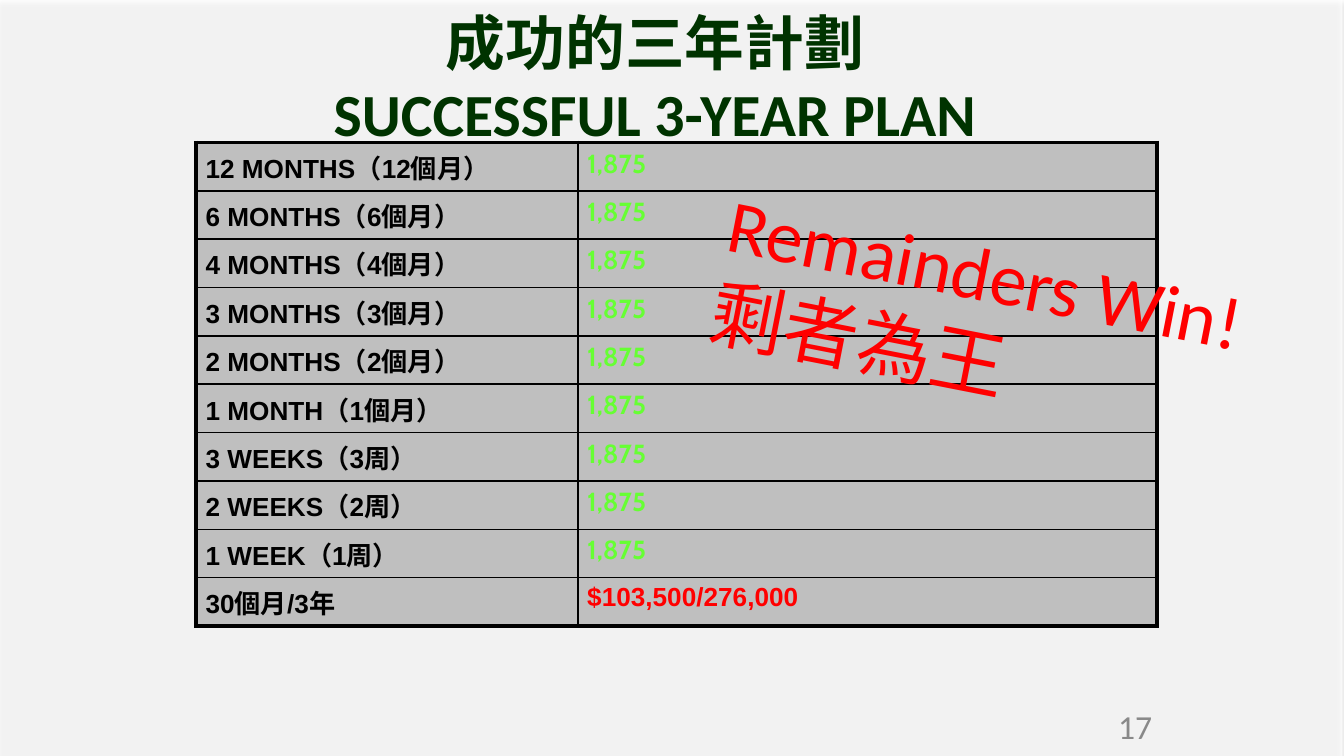
from itertools import cycle

from lxml.etree import SubElement
from pptx import Presentation
from pptx.dml.color import RGBColor
from pptx.enum.shapes import MSO_SHAPE as Shape
from pptx.enum.text import MSO_ANCHOR as Anchor, PP_ALIGN as Align
from pptx.oxml import parse_xml
from pptx.oxml.ns import nsdecls, qn
from pptx.util import Inches, Pt

W = 10
H = W * 9 / 16
CJK = "Noto Sans CJK SC"
COLS = (2.84, 4.31)
ROW_H = 0.36
MONTHS, WEEKS = ("個月）",), ("周", "）")
PERIODS = [(f"{n} MONTH{'S' if n > 1 else ''}（{n}", *MONTHS) for n in (12, 6, 4, 3, 2, 1)]
PERIODS += [(f"{n} WEEK{'S' if n > 1 else ''}（{n}", *WEEKS) for n in (3, 2, 1)]
ROWS = [(label, "1,875", "Cabin", "66FF33") for label in PERIODS]
ROWS.append((("30", "個月", "/3", "年"), "$103,500/276,000", "Arial", "FF0000"))


def rgb(value):
    """Turn a hex string into a colour."""
    return RGBColor.from_string(value)


def style(font, color, **fmt):
    """Set the colour and other attributes of a font, with a CJK fallback."""
    for key, value in fmt.items():
        setattr(font, key, value)
    font.color.rgb = rgb(color)
    SubElement(font._element, qn("a:ea")).set("typeface", CJK)


def add_run(p, text, **fmt):
    """Append a styled run to a paragraph."""
    r = p.add_run()
    r.text = text
    style(r.font, **fmt)


def set_frame(tf):
    """Give a text frame the slide's insets, wrapping and top anchor."""
    fmt = dict(margin_left=Inches(0.07), margin_right=Inches(0.07),
               margin_top=Inches(0.04), margin_bottom=Inches(0.04),
               word_wrap=True, vertical_anchor=Anchor.TOP)
    for key, value in fmt.items():
        setattr(tf, key, value)


def place(sp, box):
    """Move and size a shape from a box in inches."""
    for key, value in zip(("left", "top", "width", "height"), box):
        setattr(sp, key, Inches(value))


def add_backdrop(s, box):
    """Add a translucent white panel with a soft shadow behind everything."""
    sp = s.shapes.add_shape(Shape.RECTANGLE, *map(Inches, box))
    sp.line.fill.background()
    sp.fill.solid()
    sp.fill.fore_color.rgb = rgb("FFFFFF")
    color = sp._element.spPr.find(f'.//{qn("a:srgbClr")}')
    SubElement(color, qn("a:alpha")).set("val", "83000")
    sp._element.spPr.append(parse_xml(
        f'<a:effectLst {nsdecls("a")}><a:outerShdw blurRad="{Pt(3.1)}" dist="{Pt(1.8)}" '
        'dir="5400000" rotWithShape="0"><a:srgbClr val="000000"><a:alpha val="35000"/>'
        '</a:srgbClr></a:outerShdw></a:effectLst>'))
    s.shapes._spTree.insert(2, sp._element)


def add_title(s, lines, box):
    """Fill the title placeholder with centred lines."""
    sp = s.shapes.title
    place(sp, box)
    tf = sp.text_frame
    set_frame(tf)
    p = tf.paragraphs[0]
    p.alignment = Align.CENTER
    for i, line in enumerate(lines):
        if i:
            p.add_line_break()
        add_run(p, line, color="003300", size=Pt(32), name="Calibri", bold=True)


def add_text(s, lines, box, rotation=0, **fmt):
    """Add a text box with one paragraph per line."""
    sp = s.shapes.add_textbox(*map(Inches, box))
    sp.rotation = rotation
    tf = sp.text_frame
    set_frame(tf)
    for i, line in enumerate(lines):
        p = tf.add_paragraph() if i else tf.paragraphs[0]
        add_run(p, line, **fmt)


def set_borders(cell, widths):
    """Draw the left, right, top and bottom lines of a cell."""
    props = cell._tc.get_or_add_tcPr()
    for i, (side, width) in enumerate(zip("LRTB", widths)):
        props.insert(i, parse_xml(
            f'<a:ln{side} {nsdecls("a")} w="{Pt(width)}"><a:solidFill>'
            f'<a:srgbClr val="000000"/></a:solidFill></a:ln{side}>'))


def fill_cell(cell, parts, fonts, color):
    """Fill a cell with grey and bold runs in alternating fonts."""
    cell.fill.solid()
    cell.fill.fore_color.rgb = rgb("BFBFBF")
    cell.margin_left = cell.margin_right = Inches(0.07)
    cell.margin_top = cell.margin_bottom = Inches(0.04)
    p = cell.text_frame.paragraphs[0]
    for text, name in zip(parts, cycle(fonts)):
        add_run(p, text, color=color, size=Pt(14), name=name, bold=True)


def add_plan(s, left, top):
    """Add the plan table with a thick outer frame."""
    n = len(ROWS)
    frame = s.shapes.add_table(n, 2, *map(Inches, (left, top, sum(COLS), n * ROW_H)))
    table = frame.table
    table.first_row = table.horz_banding = False
    for col, width in zip(table.columns, COLS):
        col.width = Inches(width)
    for i, (label, amount, font, color) in enumerate(ROWS):
        fill_cell(table.cell(i, 0), label, ("Arial", CJK), "000000")
        fill_cell(table.cell(i, 1), (amount,), (font,), color)
        for j in range(2):
            edges = (j == 0, j == 1, i == 0, i == n - 1)
            set_borders(table.cell(i, j), [2.25 if edge else 1 for edge in edges])


def main():
    """Build the slide and save it."""
    prs = Presentation()
    prs.slide_width, prs.slide_height = Inches(W), Inches(H)
    s = prs.slides.add_slide(prs.slide_layouts[5])
    s.background.fill.solid()
    s.background.fill.fore_color.rgb = rgb("FFFFFF")
    add_backdrop(s, (-0.01, 0, 10, 5.89))
    add_text(s, ["17"], (8.25, 5.21, 1.08, 0.3), color="898989", size=Pt(18), name="Calibri")
    add_title(s, ["成功的三年計劃", "SUCCESSFUL 3-YEAR PLAN"], (1.5, 0, 6.75, 0.51))
    add_plan(s, 1.46, 1.06)
    add_text(s, ["Remainders Win!", "剩者為王"], (5.25, 1.73, 4.91, 1.42), 11.2,
             color="FF0000", size=Pt(40), name="Calibri")
    prs.save("out.pptx")


if __name__ == "__main__":
    main()
